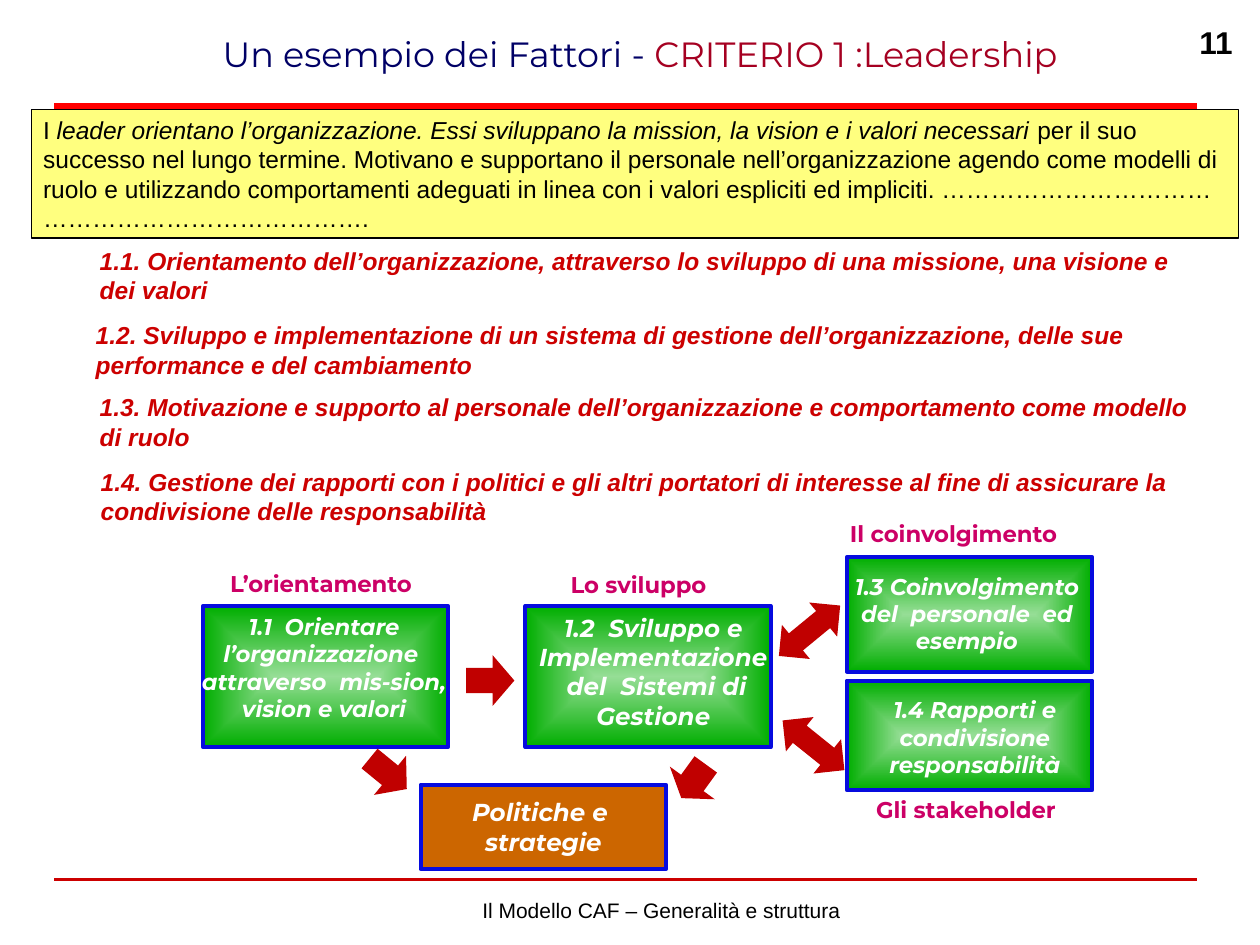
import pptx
import pptx.dml.color
import pptx.enum.dml
import pptx.enum.shapes
import pptx.enum.text
import pptx.oxml
import pptx.oxml.ns
import pptx.util
from lxml import etree

Cm = pptx.util.Cm
RGBColor = pptx.dml.color.RGBColor
ALIGN = pptx.enum.text.PP_ALIGN
ANCHOR = pptx.enum.text.MSO_ANCHOR
SHAPE = pptx.enum.shapes.MSO_SHAPE

BLACK = RGBColor(0, 0, 0)
WHITE = RGBColor(255, 255, 255)
NAVY = RGBColor(0x00, 0x00, 0x66)
WINE = RGBColor(0xA5, 0x00, 0x21)
RED = RGBColor(0xFF, 0x00, 0x00)
CRIMSON = RGBColor(0xCC, 0x00, 0x00)
ARROW_RED = RGBColor(0xC0, 0x00, 0x00)
YELLOW = RGBColor(0xFF, 0xFF, 0x00)
LIGHT_GREEN = RGBColor(0x96, 0xDE, 0x96)
GREEN = RGBColor(0x00, 0xAE, 0x00)
BLUE = RGBColor(0x06, 0x0B, 0xDE)
ORANGE = RGBColor(0xCC, 0x66, 0x00)
MAGENTA = RGBColor(0xCC, 0x00, 0x66)

BOX_WIDTH = 4.95
LABEL_SIZE = (5.16, 0.79)

INTRO = [
    [("I ", {}),
     ("leader orientano l’organizzazione. Essi sviluppano la mission, la vision "
      "e i valori necessari ", {"italic": True}),
     ("per il suo successo nel lungo termine. Motivano e supportano il personale "
      "nell’organizzazione agendo come modelli di ruolo e utilizzando "
      "comportamenti adeguati in linea con i valori espliciti ed impliciti. "
      "……………………………", {})],
    [("………………………………….", {})],
]
# text, left, top, width
CRITERIA = [
    ("1.1. Orientamento dell’organizzazione, attraverso lo sviluppo di una "
     "missione, una visione e dei valori", 1.78, 4.85, 22.61),
    ("1.2. Sviluppo e implementazione di un sistema di gestione "
     "dell’organizzazione, delle sue performance e del cambiamento",
     1.7, 6.35, 23.39),
    ("1.3. Motivazione e supporto al personale dell’organizzazione e "
     "comportamento come modello di ruolo", 1.78, 7.8, 22.61),
    ("1.4. Gestione dei rapporti con i politici e gli altri portatori di "
     "interesse al fine di assicurare la condivisione delle responsabilità",
     1.8, 9.3, 22.61),
]
# text, size, (left, top, height) of the box, area of the text
FACTORS = [
    ("1.1  Orientare l’organizzazione  attraverso  mis-sion, vision e valori",
     13, (4.09, 12.22, 2.84), (3.81, 12.24, 5.44, 3.28)),
    ("1.2  Sviluppo e Implementazione  del  Sistemi di Gestione",
     14, (10.59, 12.22, 2.84), (10.59, 12.24, 5.16, 2.62)),
    ("1.3 Coinvolgimento del  personale  ed esempio",
     13, (17.07, 11.23, 2.31), (16.71, 11.43, 5.56, 1.91)),
    ("1.4 Rapporti e condivisione responsabilità",
     13, (17.07, 13.72, 2.21), (17.07, 13.92, 5.16, 1.91)),
]
LABELS = [
    ("L’orientamento", 3.89, 11.38),
    ("Lo sviluppo", 10.29, 11.4),
    ("Gli stakeholder", 16.89, 15.93),
    ("Il coinvolgimento", 16.64, 10.36),
]
# area, rotation
ONE_WAY_ARROWS = [
    ((9.4, 13.21, 0.97, 1.02), 0),
    ((13.56, 15.19, 0.84, 1.12), 126),
    ((7.34, 15.09, 0.97, 1.02), 39.3),
]
TWO_WAY_ARROWS = [
    ((15.6, 14.58, 1.6, 0.89), 38.8),
    ((15.52, 12.27, 1.6, 0.89), 320.6),
]


def write(shape, text, size=14, font="Arial", color=BLACK, bold=False,
          italic=False, align=ALIGN.LEFT, anchor=ANCHOR.TOP, wrap=True,
          inset=(0.23, 0.11)):
    """Fill a shape with a string, or with paragraphs of (text, format) spans."""
    frame = shape.text_frame
    frame.auto_size = pptx.enum.text.MSO_AUTO_SIZE.NONE
    frame.word_wrap = wrap
    frame.vertical_anchor = anchor
    frame.margin_left = frame.margin_right = Cm(inset[0])
    frame.margin_top = frame.margin_bottom = Cm(inset[1])
    paragraphs = [[(text, {})]] if isinstance(text, str) else text
    for index, spans in enumerate(paragraphs):
        para = frame.add_paragraph() if index else frame.paragraphs[0]
        para.alignment = align
        for words, changes in spans:
            span = para.add_run()
            span.text = words
            span.font.name = font
            span.font.size = pptx.util.Pt(size)
            span.font.bold = bold
            span.font.italic = changes.get("italic", italic)
            span.font.color.rgb = changes.get("color", color)


def add_text(slide, area, text, **text_format):
    box = slide.shapes.add_textbox(*map(Cm, area))
    write(box, text, **text_format)


def add_block(slide, area, fill=None, border=None, border_width=2.25,
              kind=SHAPE.RECTANGLE):
    block = slide.shapes.add_shape(kind, *map(Cm, area))
    block.shadow.inherit = False
    if fill is not None:
        block.fill.solid()
        block.fill.fore_color.rgb = fill
    if border is None:
        block.line.fill.background()
    else:
        block.line.color.rgb = border
        block.line.width = pptx.util.Pt(border_width)
    return block


def add_rule(slide, top, color, width):
    rule = slide.shapes.add_connector(
        pptx.enum.shapes.MSO_CONNECTOR.STRAIGHT,
        Cm(1.09), Cm(top), Cm(24.13), Cm(top))
    rule.line.color.rgb = color
    rule.line.width = pptx.util.Pt(width)
    etree.SubElement(rule._element.spPr, pptx.oxml.ns.qn("a:effectLst"))


def make_half_transparent(shape):
    color = shape._element.spPr.find(".//" + pptx.oxml.ns.qn("a:srgbClr"))
    etree.SubElement(color, pptx.oxml.ns.qn("a:alpha"), val="50000")


def glow_from_centre(shape):
    """Give a shape a rectangular gradient, light in the middle."""
    shape.fill.gradient()
    for stop, position, color in zip(shape.fill.gradient_stops, (0, 1),
                                     (LIGHT_GREEN, GREEN)):
        stop.position = position
        stop.color.rgb = color
    linear = shape._element.spPr.find(".//" + pptx.oxml.ns.qn("a:lin"))
    path_element = etree.Element(pptx.oxml.ns.qn("a:path"), path="rect")
    etree.SubElement(path_element, pptx.oxml.ns.qn("a:fillToRect"),
                     l="50000", t="50000", r="50000", b="50000")
    linear.getparent().replace(linear, path_element)


def add_arrow(slide, kind, area, rotation):
    arrow = add_block(slide, area, fill=ARROW_RED, kind=kind)
    arrow.rotation = rotation
    return arrow


def add_title(slide):
    title = slide.shapes.title
    title.left, title.top, title.width, title.height = map(
        Cm, (0.51, 0.53, 24.79, 1.12))
    write(title, [[("Un esempio dei Fattori -", {}),
                   (" CRITERIO 1 :Leadership", {"color": WINE})]],
          size=20, font="Montserrat", color=NAVY, align=ALIGN.CENTER,
          inset=(0.25, 0.13))


def add_page_frame(slide):
    add_rule(slide, 2.13, RED, 3.5)
    add_rule(slide, 17.73, CRIMSON, 1.5)
    footer = add_block(slide, (7.57, 17.96, 11.53, 0.76), fill=WHITE)
    write(footer, "Il Modello CAF – Generalità e struttura", size=12,
          align=ALIGN.CENTER, anchor=ANCHOR.MIDDLE, inset=(0.25, 0.13))
    add_text(slide, (23.7, 0.33, 1.4, 1.27), "11", size=18, bold=True,
             align=ALIGN.RIGHT, inset=(0.25, 0.13))


def add_diagram(slide):
    centred = {"font": "Montserrat", "bold": True, "align": ALIGN.CENTER}
    for text, size, (left, top, height), text_area in FACTORS:
        glow_from_centre(add_block(slide, (left, top, BOX_WIDTH, height),
                                   border=BLUE))
        add_text(slide, text_area, text, size=size, color=WHITE, italic=True,
                 **centred)
    for text, left, top in LABELS:
        add_text(slide, (left, top, *LABEL_SIZE), text, size=13,
                 color=MAGENTA, **centred)
    for area, rotation in TWO_WAY_ARROWS:
        add_arrow(slide, SHAPE.LEFT_RIGHT_ARROW, area, rotation)
    policies = add_block(slide, (8.48, 15.82, BOX_WIDTH, 1.7), fill=ORANGE,
                         border=BLUE)
    write(policies, [[("Politiche e ", {})], [("strategie", {})]],
          color=WHITE, italic=True, anchor=ANCHOR.MIDDLE, wrap=False, **centred)
    for area, rotation in ONE_WAY_ARROWS:
        arrow = add_arrow(slide, SHAPE.RIGHT_ARROW, area, rotation)
        arrow.adjustments[1] = 0.45


def main():
    deck = pptx.Presentation()
    deck.slide_width, deck.slide_height = Cm(25.4), Cm(19.05)
    slide = deck.slides.add_slide(deck.slide_layouts.get_by_name("Title Only"))
    add_page_frame(slide)
    add_title(slide)
    intro = add_block(slide, (0.64, 2.21, 24.33, 2.59), fill=YELLOW,
                      border=BLACK, border_width=0.75)
    make_half_transparent(intro)
    write(intro, INTRO)
    for text, left, top, width in CRITERIA:
        add_text(slide, (left, top, width, 1.42), text, color=CRIMSON,
                 bold=True, italic=True)
    add_diagram(slide)
    deck.save("out.pptx")


if __name__ == "__main__":
    main()
